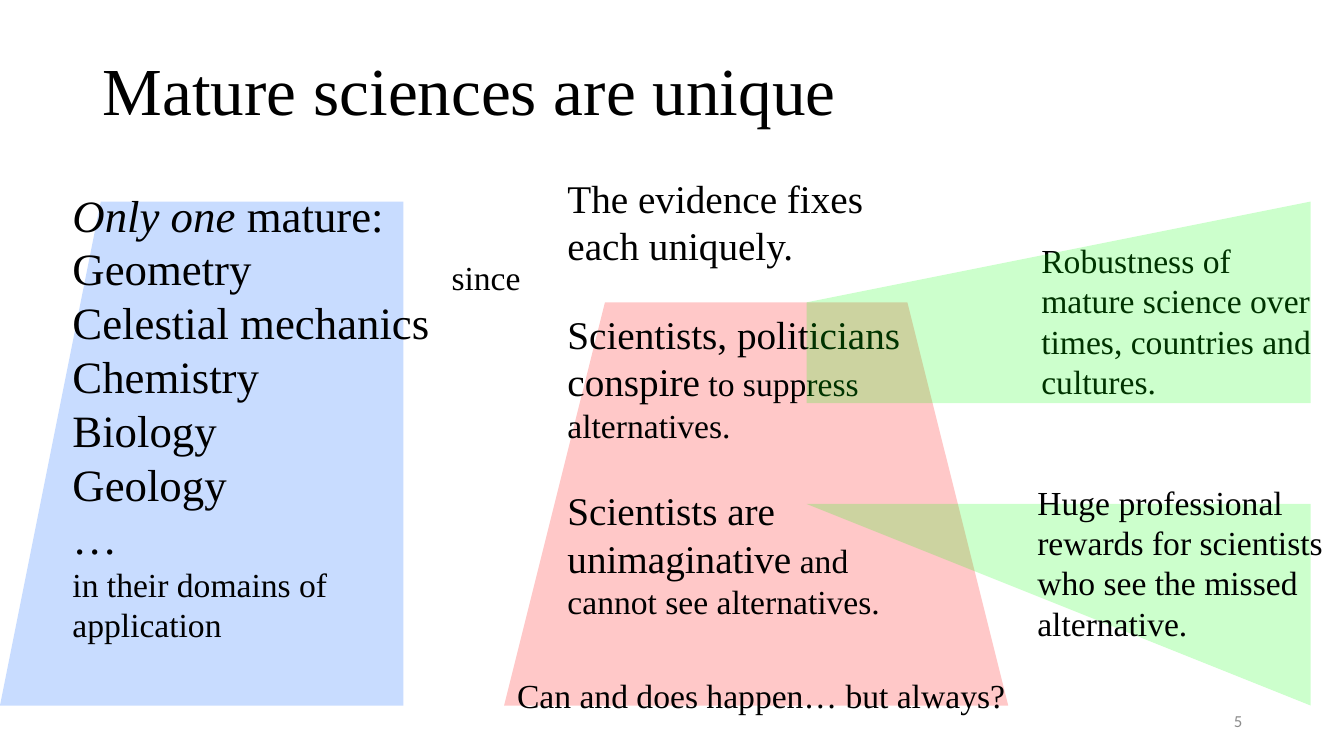
from pptx import Presentation
from pptx.dml.color import RGBColor
from pptx.enum.text import MSO_ANCHOR as Anchor, MSO_AUTO_SIZE as Auto, PP_ALIGN as Align
from pptx.oxml.ns import qn
from pptx.util import Inches, Pt
from lxml.etree import SubElement

HUE = {"ink": "000000", "gray": "8C8C8C", "blue": "C8DCFF", "pink": "FFC8C8", "green": "00FF00"}
SERIF = "Times New Roman"
BIG, MID, LOW = 32, 28, 24

deck = Presentation()
deck.slide_width, deck.slide_height = Inches(13.33), Inches(7.5)
slide = deck.slides.add_slide(deck.slide_layouts[5])

# Grid of one-inch columns and rows
COL, ROW = deck.slide_width / 13.33, deck.slide_height / 7.5


def write(frame, paras, font=SERIF, hue="ink"):
    """Fill a frame; each paragraph is a list of (text, size, italic) runs."""
    for i, runs in enumerate(paras):
        para = frame.paragraphs[0] if i == 0 else frame.add_paragraph()
        para.alignment = Align.LEFT
        for text, size, slant in runs:
            run = para.add_run()
            run.text = text
            run.font.name, run.font.size, run.font.italic = font, Pt(size), slant
            run.font.color.rgb = RGBColor.from_string(HUE[hue])


def patch(points, hue, alpha=None):
    """Draw a closed outline in a flat, optionally clear, colour."""
    form = slide.shapes.build_freeform(*points[0], scale=(COL, ROW))
    form.add_line_segments(points[1:], close=True)
    shape = form.convert_to_shape()
    shape.shadow.inherit = False
    shape.line.fill.background()
    shape.fill.solid()
    shape.fill.fore_color.rgb = RGBColor.from_string(HUE[hue])
    if alpha:
        tint = shape.fill._xPr.find(qn("a:solidFill"))[0]
        SubElement(tint, qn("a:alpha"), val=str(alpha * 1000))


# Title
title = slide.shapes.title
title.left, title.top = round(0.92 * COL), round(0.4 * ROW)
title.width, title.height = round(8.5 * COL), round(1.06 * ROW)
title.text_frame.vertical_anchor = Anchor.MIDDLE
write(title.text_frame, [[("Mature sciences are unique", 48, False)]])
title.text_frame.paragraphs[0].line_spacing = 0.9

# Pink and blue panels behind the text
patch([(5.9, 2.94), (4.94, 7.28), (10.25, 7.19), (8.68, 3.11)], "pink")
patch([(0.89, 1.77), (4.14, 1.8), (3.85, 6.89), (3.13, 6.89), (0.46, 6.72)], "blue")

# Green wedge under the rewards note
patch([(7.57, 5.25), (13.26, 6.59), (13.05, 4.75), (7.68, 5.04)], "green", 20)

# Notes: left, top, width, height, wrap, paragraphs
fields = ["Geometry", "Celestial mechanics", "Chemistry", "Biology", "Geology", "…"]
notes = [
    (5.03, 6.65, 5.09, 0.5, False, [[("Can and does happen… but always?", LOW, False)]]),
    (0.62, 1.81, 3.88, 4.68, True,
     [[("Only one", BIG, True), (" mature:", BIG, False)]]
     + [[(name, BIG, False)] for name in fields]
     + [[("in their domains of application", LOW, False)]]),
    (4.38, 2.5, 0.89, 0.5, False, [[("since", LOW, False)]]),
    (5.53, 1.68, 3.88, 1.04, True, [[("The evidence fixes each uniquely.", MID, False)]]),
    (5.53, 3.03, 3.67, 1.45, True,
     [[("Scientists, politicians conspire", MID, False),
       (" to suppress alternatives.", LOW, False)]]),
    (5.53, 4.78, 3.88, 1.45, True,
     [[("Scientists are unimaginative", MID, False),
       (" and cannot see alternatives.", LOW, False)]]),
    (10.23, 2.33, 3.03, 1.72, True,
     [[("Robustness of mature science over times, countries and cultures.", LOW, False)]]),
    (10.19, 4.73, 3.03, 1.72, True,
     [[("Huge professional rewards for scientists who see the missed alternative.",
        LOW, False)]]),
]
for x, y, w, h, wrap, paras in notes:
    box = slide.shapes.add_textbox(round(x * COL), round(y * ROW), round(w * COL), round(h * ROW))
    box.text_frame.word_wrap = wrap
    box.text_frame.auto_size = Auto.SHAPE_TO_FIT_TEXT
    write(box.text_frame, paras)

# Green wedge over the robustness note
patch([(7.97, 3.42), (12.87, 1.95), (12.7, 3.97), (8.06, 3.66)], "green", 20)

# Slide number
page = slide.shapes.add_textbox(
    round(11.71 * COL), round(6.95 * ROW), round(0.71 * COL), round(0.4 * ROW)).text_frame
page.word_wrap = True
page.vertical_anchor = Anchor.MIDDLE
write(page, [[("5", 12, False)]], "Calibri", "gray")
page.paragraphs[0].alignment = Align.RIGHT

deck.save("out.pptx")
